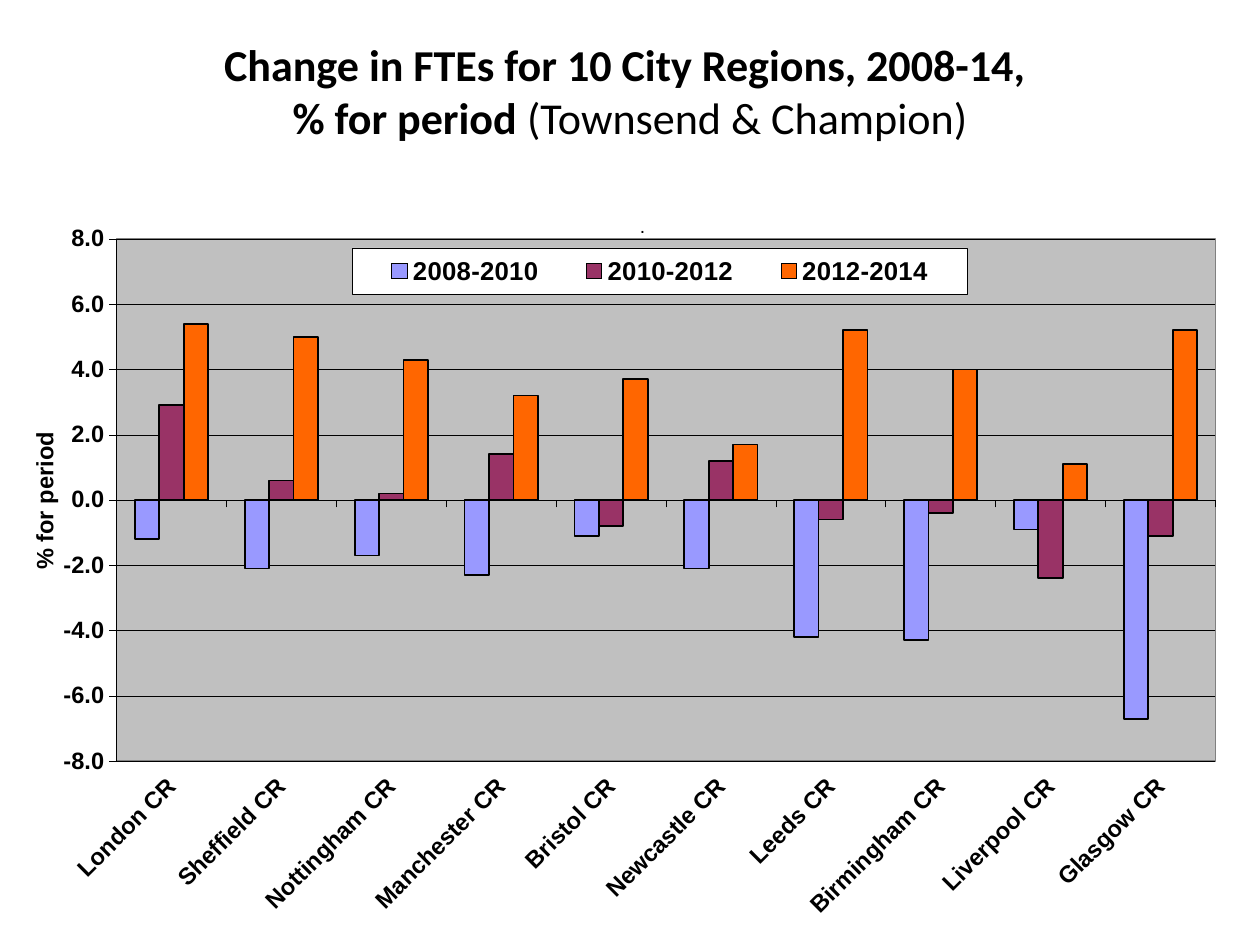
from pptx import Presentation
from pptx.chart.data import CategoryChartData
from pptx.dml.color import RGBColor
from pptx.enum.chart import XL_CHART_TYPE as ChartType
from pptx.enum.chart import XL_LEGEND_POSITION as LegendPosition
from pptx.enum.chart import XL_TICK_LABEL_POSITION as LabelPosition
from pptx.enum.chart import XL_TICK_MARK as TickMark
from pptx.enum.text import MSO_ANCHOR as Anchor
from pptx.enum.text import PP_ALIGN as Align
from pptx.oxml import parse_xml
from pptx.oxml.ns import nsdecls, qn
from pptx.util import Cm, Pt

BLACK = RGBColor(0x00, 0x00, 0x00)
WHITE = RGBColor(0xFF, 0xFF, 0xFF)
SILVER = RGBColor(0xC0, 0xC0, 0xC0)
GREY = RGBColor(0x80, 0x80, 0x80)
LAVENDER = RGBColor(0x99, 0x99, 0xFF)
PLUM = RGBColor(0x99, 0x33, 0x66)
ORANGE = RGBColor(0xFF, 0x66, 0x00)

CITIES = ["London", "Sheffield", "Nottingham", "Manchester", "Bristol",
          "Newcastle", "Leeds", "Birmingham", "Liverpool", "Glasgow"]
PERIODS = [
    ("2008-2010", LAVENDER, [-1.2, -2.1, -1.7, -2.3, -1.1, -2.1, -4.2, -4.3, -0.9, -6.7]),
    ("2010-2012", PLUM, [2.9, 0.6, 0.2, 1.4, -0.8, 1.2, -0.6, -0.4, -2.4, -1.1]),
    ("2012-2014", ORANGE, [5.4, 5.0, 4.3, 3.2, 3.7, 1.7, 5.2, 4.0, 1.1, 5.2]),
]


def style_font(font, size, bold, name="Arial"):
    values = {"name": name, "size": Pt(size), "bold": bold}
    for attribute, value in values.items():
        setattr(font, attribute, value)
    font.color.rgb = BLACK


def place(element, index, target="", **fractions):
    """Give a chart part a manual layout, in fractions of the chart area."""
    for old in element.findall(qn("c:layout")):
        element.remove(old)
    inner = f'<c:layoutTarget val="{target}"/>' if target else ""
    modes = "".join(f'<c:{key}Mode val="edge"/>' for key in ("x", "y"))
    sizes = "".join(f'<c:{key} val="{value}"/>' for key, value in fractions.items())
    element.insert(index, parse_xml(
        f'<c:layout {nsdecls("c")}><c:manualLayout>{inner}{modes}{sizes}'
        "</c:manualLayout></c:layout>"))


presentation = Presentation()
presentation.slide_width = Cm(25.4)
presentation.slide_height = Cm(19.05)
slide = presentation.slides.add_slide(presentation.slide_layouts[6])

# Heading
heading = slide.shapes.add_textbox(Cm(1.27), Cm(0.76), Cm(22.86), Cm(3.18))
frame = heading.text_frame
frame_format = {"word_wrap": True, "vertical_anchor": Anchor.MIDDLE,
                "margin_bottom": Cm(1.19)}
for attribute, value in frame_format.items():
    setattr(frame, attribute, value)
paragraph = frame.paragraphs[0]
paragraph.alignment = Align.CENTER
for text, bold, breaks in [("Change in FTEs for 10 City Regions, 2008-14, ", True, True),
                           ("% for period ", True, False),
                           ("(Townsend & Champion)", False, False)]:
    run = paragraph.add_run()
    run.text = text
    style_font(run.font, 25.2, bold, "Calibri")
    if breaks:
        paragraph.add_line_break()

# Chart
chart_data = CategoryChartData(number_format="0.0")
chart_data.categories = [f"{city} CR" for city in CITIES]
for period, _, changes in PERIODS:
    chart_data.add_series(period, changes)
chart = slide.shapes.add_chart(ChartType.COLUMN_CLUSTERED, Cm(0.51), Cm(3.94),
                               Cm(24.89), Cm(15.11), chart_data).chart
style_font(chart.font, 9.5, False)

plot = chart.plots[0]
plot.gap_width = 150
plot.overlap = 0
plot.vary_by_categories = False
for series, (_, color, _) in zip(plot.series, PERIODS):
    series.invert_if_negative = False
    series.format.fill.solid()
    series.format.fill.fore_color.rgb = color
    series.format.line.color.rgb = BLACK
    series.format.line.width = Pt(1)

# Axes
category_axis, value_axis = chart.category_axis, chart.value_axis
value_format = {"minimum_scale": -8, "maximum_scale": 8, "major_unit": 2,
                "has_major_gridlines": True}
for attribute, value in value_format.items():
    setattr(value_axis, attribute, value)
for axis in (category_axis, value_axis):
    axis.major_tick_mark = TickMark.OUTSIDE
    axis.minor_tick_mark = TickMark.NONE
    style_font(axis.tick_labels.font, 13.5, True)
for line in (category_axis.format.line, value_axis.format.line,
             value_axis.major_gridlines.format.line):
    line.color.rgb = BLACK
    line.width = Pt(0.25)
category_axis.tick_label_position = LabelPosition.LOW
label_body = category_axis._element.find(qn("c:txPr")).find(qn("a:bodyPr"))
label_body.set("rot", "-2700000")
label_body.set("vert", "horz")
value_axis.tick_labels.number_format = "0.0"
value_axis.tick_labels.number_format_is_linked = False

# Chart and axis titles
for title, text, size, bold, left, top in [
        (chart.chart_title, ".", 11, False, 0.495, 0.018),
        (value_axis.axis_title, "% for period", 13.5, True, 0, 0.31)]:
    title.text_frame.text = text
    style_font(title.text_frame.paragraphs[0].runs[0].font, size, bold)
    place(title._element, 1, x=left, y=top)
value_title_body = value_axis.axis_title.text_frame._txBody.find(qn("a:bodyPr"))
value_title_body.set("rot", "-5400000")
value_title_body.set("vert", "horz")

# Legend
chart.has_legend = True
legend = chart.legend
legend.position = LegendPosition.TOP
legend.include_in_layout = True
style_font(legend.font, 14.7, True)
place(legend._element, 1, x=0.265, y=0.07, w=0.498, h=0.062)
legend._element.find(qn("c:txPr")).addprevious(parse_xml(
    f'<c:spPr {nsdecls("c", "a")}>'
    f'<a:solidFill><a:srgbClr val="{WHITE}"/></a:solidFill>'
    f'<a:ln w="{Pt(0.25)}"><a:solidFill><a:srgbClr val="{BLACK}"/></a:solidFill></a:ln>'
    "</c:spPr>"))

# Plot area
plot_area = chart._chartSpace.chart.plotArea
place(plot_area, 0, "inner", x=0.074, y=0.058, w=0.89, h=0.697)
plot_area.append(parse_xml(
    f'<c:spPr {nsdecls("c", "a")}>'
    f'<a:solidFill><a:srgbClr val="{SILVER}"/></a:solidFill>'
    f'<a:ln w="{Pt(1)}"><a:solidFill><a:srgbClr val="{GREY}"/></a:solidFill></a:ln>'
    "</c:spPr>"))

presentation.save("out.pptx")
